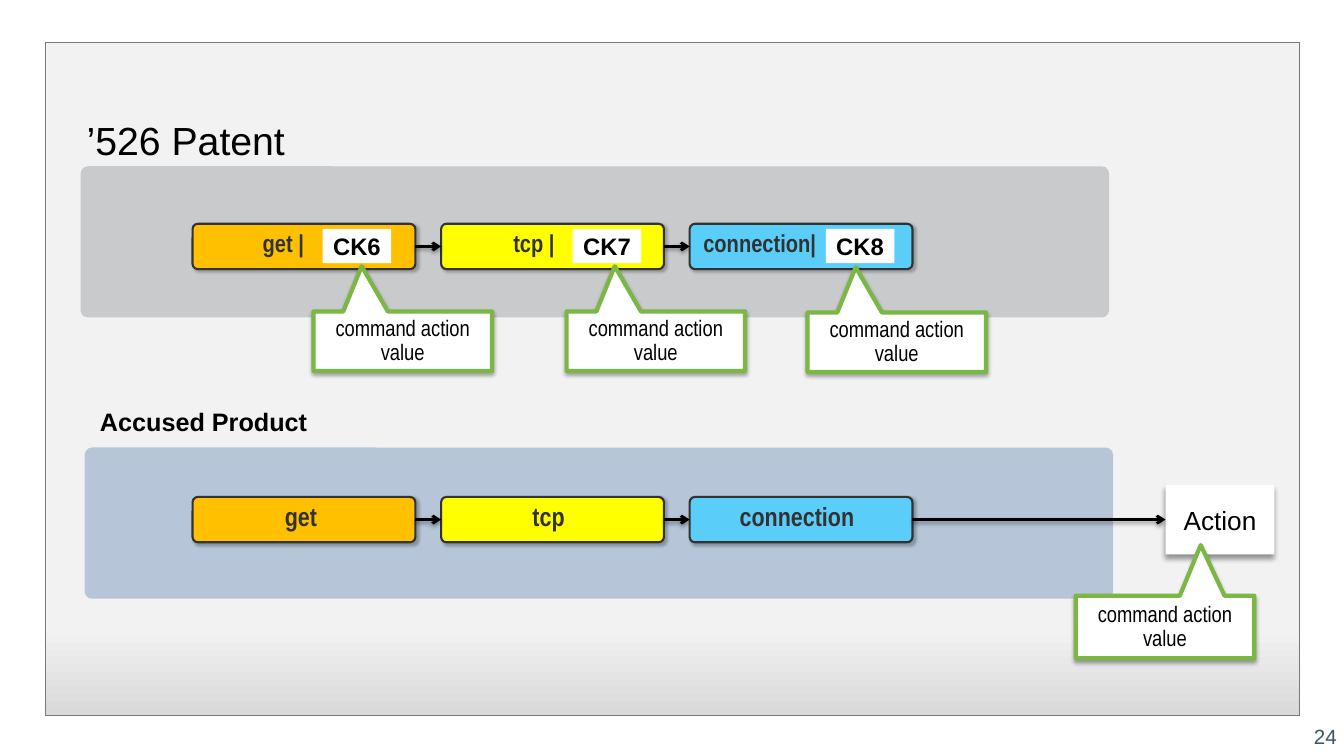
from lxml.etree import SubElement
from pptx import Presentation
from pptx.dml.color import RGBColor
from pptx.enum.shapes import MSO_CONNECTOR, MSO_SHAPE
from pptx.enum.text import MSO_ANCHOR, MSO_AUTO_SIZE, PP_ALIGN
from pptx.oxml.ns import qn
from pptx.util import Inches, Pt

STEP_COLORS = ("FFC000", "FFFF00", "5ACEF9")
STEP_LEFT, STEP_PITCH = 1.91, 2.465
STEP_WIDTH, STEP_HEIGHT = 2.21, 0.45
RIGHT_SITE, LEFT_SITE = 3, 1

STEP_SHADOW = (25, 2, 2, 45)
ARROW_SHADOW = (38, 3.1, 1.6, 90)
CALLOUT_SHADOW = (35, 3.1, 1.8, 90)
ACTION_SHADOW = (40, 4, 3, 90)

STEP_FONT = {"name": "Arial Narrow", "bold": True}
CALLOUT_FONT = {"name": "Arial Narrow", "size": Pt(16)}
KEY_FONT = {"name": "Arial", "size": Pt(17), "bold": True}
ACTION_FONT = {"name": "Arial", "size": Pt(18.7)}
TITLE_FONT = {"name": "Arial", "size": Pt(28), "bold": False}
HEADING_FONT = {"name": "Arial", "size": Pt(18), "bold": True}
NUMBER_FONT = {"name": "Arial", "size": Pt(14.7)}


def paint(color_format, color):
    color_format.rgb = RGBColor.from_string(color)


def set_attributes(target, values):
    for name, value in values.items():
        setattr(target, name, value)


def add_shadow(effects, opacity, blur, distance, angle):
    shadow = SubElement(effects, qn("a:outerShdw"), blurRad=str(Pt(blur)),
                        dist=str(Pt(distance)), dir=str(angle * 60000),
                        algn="ctr", rotWithShape="0")
    color = SubElement(shadow, qn("a:srgbClr"), val="000000")
    SubElement(color, qn("a:alpha"), val=str(opacity * 1000))


def write(box, text, font, color="000000", align=PP_ALIGN.CENTER,
          anchor=MSO_ANCHOR.MIDDLE, inset=(0.1, 0.05), wrap=True, spacing=1.0):
    left, top = inset
    frame = box.text_frame
    set_attributes(frame, {
        "word_wrap": wrap,
        "auto_size": MSO_AUTO_SIZE.NONE,
        "vertical_anchor": anchor,
        "margin_left": Inches(left),
        "margin_right": Inches(min(left, 0.1)),
        "margin_top": Inches(top),
        "margin_bottom": Inches(top),
    })
    para = frame.paragraphs[0]
    set_attributes(para, {"alignment": align, "line_spacing": spacing})
    span = para.add_run()
    span.text = text
    set_attributes(span.font, font)
    paint(span.font.color, color)


def add_panel(page, kind, area, fill, line=None, shadow=None, adjust=()):
    panel = page.shapes.add_shape(kind, *map(Inches, area))
    for index, value in enumerate(adjust):
        panel.adjustments[index] = value
    panel.fill.solid()
    paint(panel.fill.fore_color, fill)
    if line:
        color, width = line
        paint(panel.line.color, color)
        panel.line.width = Pt(width)
    else:
        panel.line.fill.background()
    panel.shadow.inherit = False
    if shadow:
        add_shadow(panel.element.spPr.find(qn("a:effectLst")), *shadow)
    return panel


def add_frame(page):
    frame = add_panel(page, MSO_SHAPE.RECTANGLE, (0.45, 0.42, 12.44, 6.68),
                      "F2F2F2", ("76787B", 0.75))
    frame.fill.gradient()
    frame.fill.gradient_angle = 270
    stops = ((0.87, "F2F2F2"), (1.0, "D9D9D9"))
    for stop, (position, color) in zip(frame.fill.gradient_stops, stops):
        stop.position = position
        paint(stop.color, color)


def add_arrow(page, start, end):
    arrow = page.shapes.add_connector(MSO_CONNECTOR.STRAIGHT, 0, 0, 0, 0)
    arrow.begin_connect(start, RIGHT_SITE)
    arrow.end_connect(end, LEFT_SITE)
    paint(arrow.line.color, "000000")
    arrow.line.width = Pt(2)
    properties = arrow.element.spPr
    SubElement(properties.find(qn("a:ln")), qn("a:tailEnd"), type="arrow")
    add_shadow(SubElement(properties, qn("a:effectLst")), *ARROW_SHADOW)


def add_step_row(page, top, labels, insets, size):
    steps = []
    for index, (label, inset) in enumerate(zip(labels, insets)):
        area = (STEP_LEFT + index * STEP_PITCH, top, STEP_WIDTH, STEP_HEIGHT)
        step = add_panel(page, MSO_SHAPE.ROUNDED_RECTANGLE, area,
                         STEP_COLORS[index], ("323232", 1.5), STEP_SHADOW,
                         (0.117,))
        write(step, label, {**STEP_FONT, "size": Pt(size)}, "323232",
              PP_ALIGN.LEFT, inset=(inset, 0.1), spacing=0.7)
        steps.append(step)
    for start, end in zip(steps, steps[1:]):
        add_arrow(page, start, end)
    return steps


def add_key(page, left, text):
    key = add_panel(page, MSO_SHAPE.RECTANGLE, (left, 2.27, 0.68, 0.34), "FFFFFF")
    write(key, text, KEY_FONT, inset=(0, 0.05))


def add_callout(page, left, top, height, tip):
    callout = add_panel(page, MSO_SHAPE.RECTANGULAR_CALLOUT,
                        (left, top, 1.77, height), "FFFFFF", ("7AB744", 3),
                        CALLOUT_SHADOW, tip)
    write(callout, "command action value", CALLOUT_FONT, spacing=0.9)


def add_label(page, area, text, font, **options):
    label = page.shapes.add_textbox(*map(Inches, area))
    write(label, text, font, **options)


def place_title(page, text):
    title = page.shapes.title
    set_attributes(title, {"left": Inches(0.76), "top": Inches(1.1),
                           "width": Inches(2.19), "height": Inches(0.57)})
    write(title, text, TITLE_FONT, align=PP_ALIGN.LEFT,
          anchor=MSO_ANCHOR.TOP, wrap=False)
    page.shapes.element.append(title.element)


def main():
    deck = Presentation()
    deck.slide_width, deck.slide_height = Inches(13.33), Inches(7.5)
    page = deck.slides.add_slide(deck.slide_layouts[5])

    add_frame(page)
    for left, top, color in ((0.84, 4.44, "B6C5D7"), (0.8, 1.65, "C9CACB")):
        add_panel(page, MSO_SHAPE.ROUNDED_RECTANGLE, (left, top, 10.2, 1.5),
                  color, adjust=(0.048,))

    place_title(page, "’526 Patent")
    add_step_row(page, 2.22, ("get |", "tcp |", "connection|"),
                 (0.68, 0.7, 0.12), 17.5)
    for left, text in ((3.2, "CK6"), (5.68, "CK7"), (8.19, "CK8")):
        add_key(page, left, text)
    for left, top in ((3.11, 3.09), (5.62, 3.09), (8.01, 3.1)):
        add_callout(page, left, top, 0.59, (-0.23, -1.26))

    add_label(page, (0.84, 3.92, 2.36, 0.52), "Accused Product", HEADING_FONT)
    steps = add_step_row(page, 4.93, ("get", "tcp", "connection"),
                         (0.9, 0.89, 0.48), 18.7)
    action = add_panel(page, MSO_SHAPE.RECTANGLE, (11.56, 4.81, 1.08, 0.69),
                       "FFFFFF", shadow=ACTION_SHADOW)
    write(action, "Action", ACTION_FONT)
    add_arrow(page, steps[-1], action)
    add_callout(page, 10.67, 5.91, 0.62, (0.2, -1.31))

    add_label(page, (10.22, 7.1, 3.11, 0.4), "24", NUMBER_FONT,
              color="3C536F", align=PP_ALIGN.RIGHT, inset=(0.07, 0.04))
    deck.save("out.pptx")


if __name__ == "__main__":
    main()
